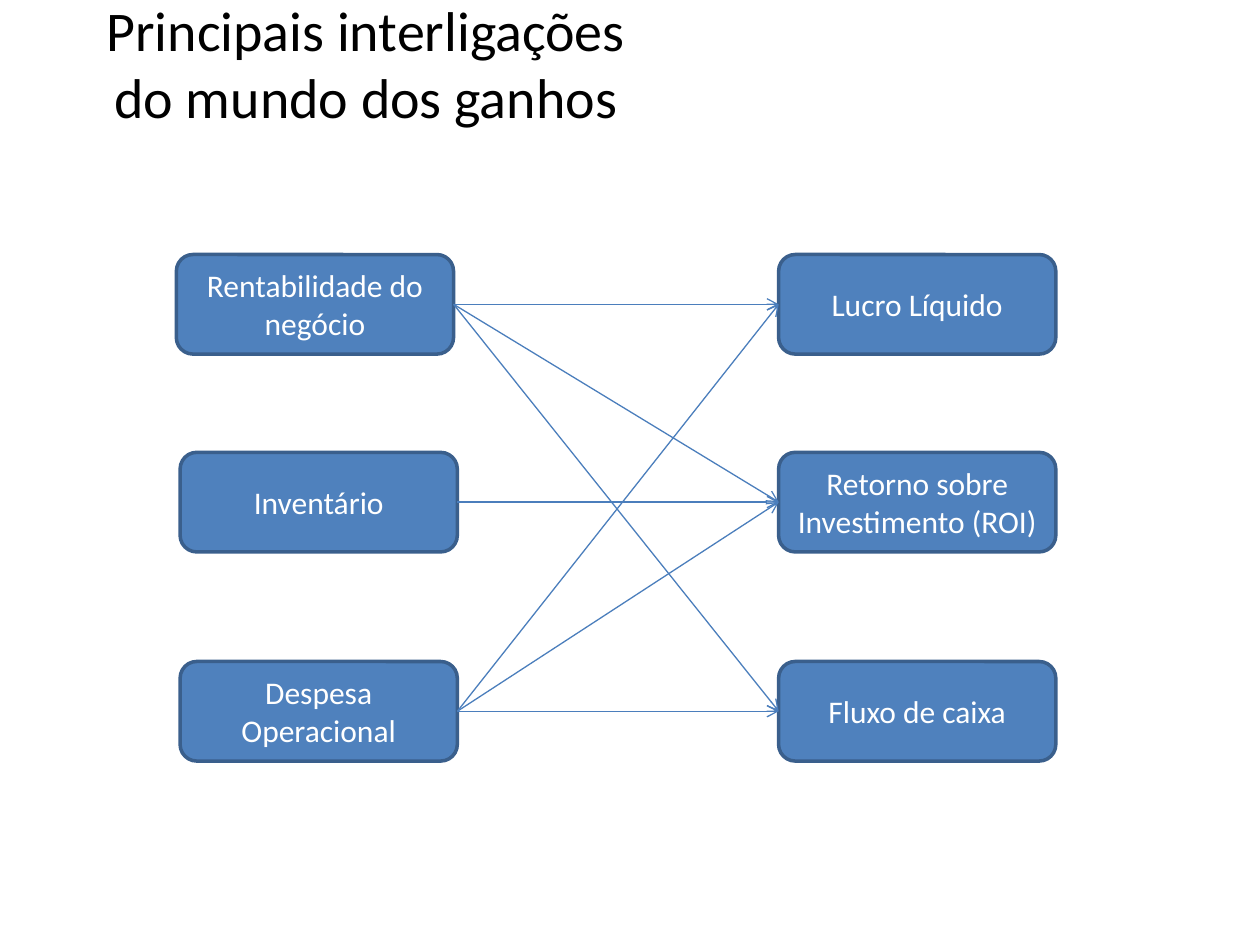
from typing import NamedTuple

from pptx import Presentation
from pptx.dml.color import RGBColor
from pptx.enum.shapes import MSO_CONNECTOR, MSO_SHAPE
from pptx.enum.text import MSO_ANCHOR, PP_ALIGN
from pptx.oxml.ns import qn
from pptx.util import Inches, Pt
from lxml.etree import SubElement

BLACK = RGBColor(0x00, 0x00, 0x00)
WHITE = RGBColor(0xFF, 0xFF, 0xFF)
BOX_FILL = RGBColor(0x4F, 0x81, 0xBD)
BOX_LINE = RGBColor(0x3A, 0x5F, 0x8C)
ARROW_LINE = RGBColor(0x4B, 0x7E, 0xBC)
FONT = "Calibri"

# Grid in inches: causes on the left, results on the right
LEFT, RIGHT = 1.43, 6.18
ROW_TOPS = (2.02, 3.59, 5.25)
BOX_WIDTH, BOX_HEIGHT = 2.2, 0.79
RIGHT_SIDE, LEFT_SIDE = 3, 1


class Box(NamedTuple):
    text: str
    column: float
    row: int
    shift: float = 0


class Link(NamedTuple):
    cause: int
    result: int


CAUSES = (
    Box("Rentabilidade do negócio", LEFT, 0, -0.03),
    Box("Inventário", LEFT, 1),
    Box("Despesa Operacional", LEFT, 2),
)
RESULTS = (
    Box("Lucro Líquido", RIGHT, 0),
    Box("Retorno sobre Investimento (ROI)", RIGHT, 1),
    Box("Fluxo de caixa", RIGHT, 2),
)
LINKS = (Link(0, 0), Link(1, 1), Link(2, 2), Link(0, 1), Link(0, 2), Link(2, 1), Link(2, 0))


def write_text(shape, text: str, size: int, color: RGBColor) -> None:
    text_frame = shape.text_frame
    text_frame.text = text
    text_frame.word_wrap = True
    text_frame.vertical_anchor = MSO_ANCHOR.MIDDLE
    paragraph = text_frame.paragraphs[0]
    paragraph.alignment = PP_ALIGN.CENTER
    font = paragraph.runs[0].font
    font.name, font.size = FONT, Pt(size)
    font.color.rgb = color


def draw_box(slide, box: Box):
    shape = slide.shapes.add_shape(
        MSO_SHAPE.ROUNDED_RECTANGLE,
        Inches(box.column + box.shift), Inches(ROW_TOPS[box.row]),
        Inches(BOX_WIDTH), Inches(BOX_HEIGHT),
    )
    shape.shadow.inherit = False
    shape.fill.solid()
    shape.fill.fore_color.rgb = BOX_FILL
    shape.line.color.rgb = BOX_LINE
    shape.line.width = Pt(2)
    write_text(shape, box.text, 18, WHITE)
    return shape


def draw_arrow(slide, start, end) -> None:
    connector = slide.shapes.add_connector(MSO_CONNECTOR.STRAIGHT, 0, 0, 0, 0)
    connector.begin_connect(start, RIGHT_SIDE)
    connector.end_connect(end, LEFT_SIDE)
    connector.line.color.rgb = ARROW_LINE
    connector.line.width = Pt(0.75)
    SubElement(connector.line._get_or_add_ln(), qn("a:tailEnd"), type="arrow")
    SubElement(connector._element.spPr, qn("a:effectLst"))


def main() -> None:
    presentation = Presentation()
    presentation.slide_width, presentation.slide_height = Inches(10), Inches(7.5)
    slide = presentation.slides.add_slide(presentation.slide_layouts[6])

    # Title
    title = slide.shapes.add_textbox(Inches(0.5), 0, Inches(4.81), Inches(0.99))
    write_text(title, "Principais interligações do mundo dos ganhos", 32, BLACK)

    # Boxes, then the arrows that join them
    causes = [draw_box(slide, box) for box in CAUSES]
    results = [draw_box(slide, box) for box in RESULTS]
    for link in LINKS:
        draw_arrow(slide, causes[link.cause], results[link.result])

    presentation.save("out.pptx")


if __name__ == "__main__":
    main()
